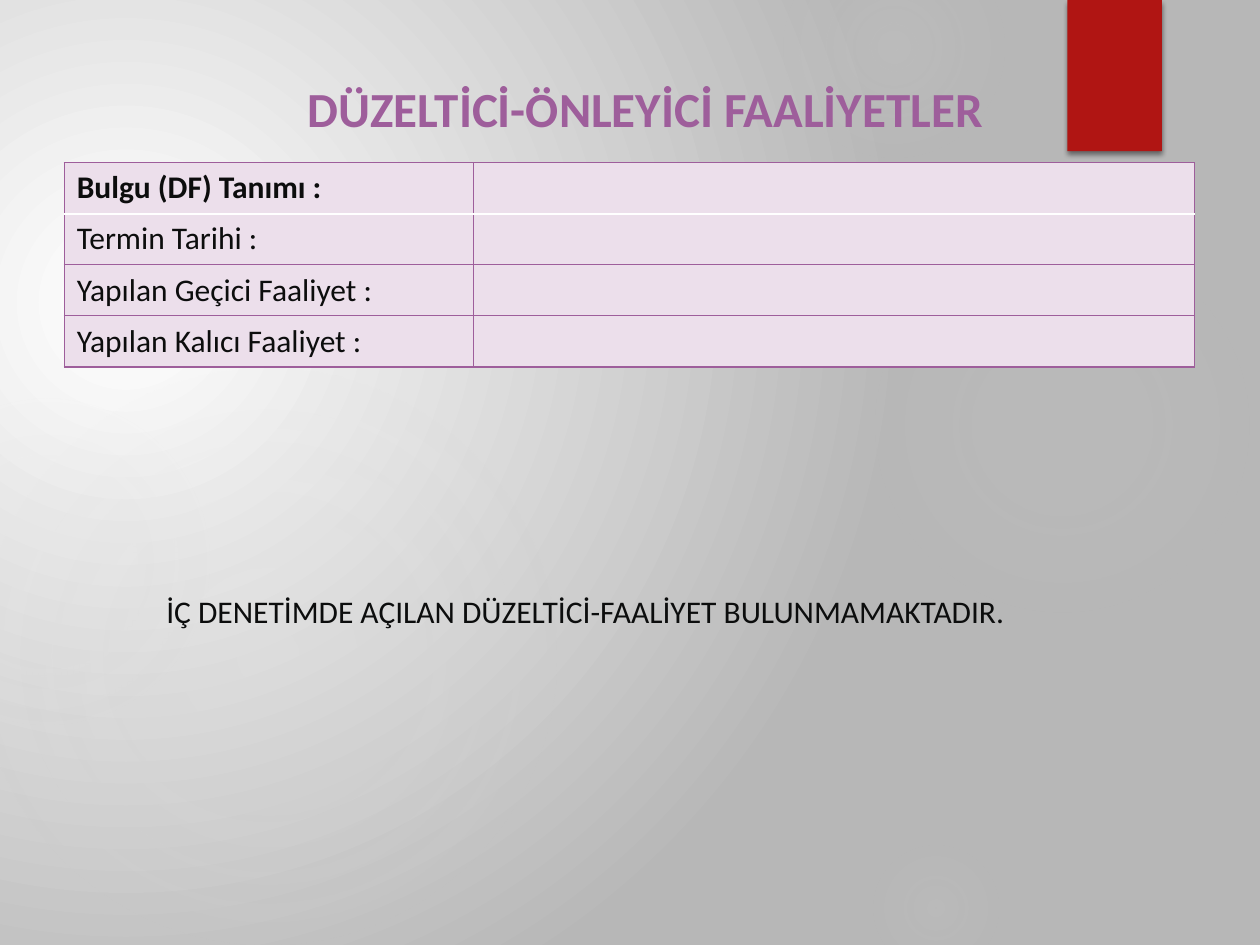
from dataclasses import dataclass
from typing import NamedTuple

from lxml.etree import SubElement
from pptx import Presentation
from pptx.dml.color import RGBColor
from pptx.enum.shapes import MSO_SHAPE
from pptx.enum.text import MSO_ANCHOR, MSO_AUTO_SIZE, PP_ALIGN
from pptx.oxml import parse_xml
from pptx.oxml.ns import nsdecls, qn
from pptx.util import Pt


@dataclass(frozen=True)
class Theme:
    font: str = "Calibri"
    head: float = 28
    body: float = 18
    ink: str = "0C0D0D"
    plum: str = "9E5E9B"
    pale: str = "ECDFEB"
    white: str = "FFFFFF"
    back: str = "B7B7B7"
    glow: str = "D9D9D9"
    red: str = "B01513"


class Stop(NamedTuple):
    pos: int
    color: str
    alpha: int = 100


class Orb(NamedTuple):
    left: float
    top: float
    size: float
    inner: int
    mid: int
    edge: int


class Box(NamedTuple):
    left: float
    top: float
    width: float
    height: float


THEME = Theme()
ORBS = [
    Orb(496, 132, 222, 7, 6, 69),
    Orb(448, -36, 126, 14, 7, 73),
    Orb(496, 480, 78, 9, 5, 66),
    Orb(-12, 210, 330, 11, 10, 75),
    Orb(-66, 228, 186, 8, 8, 72),
]
LABELS = ["Bulgu (DF) Tanımı :", "Termin Tarihi :",
          "Yapılan Geçici Faaliyet :", "Yapılan Kalıcı Faaliyet :"]
COLS = [234, 412]
ROW = 29.2


def radial(solid, stops: list[Stop], focus: tuple) -> None:
    """Swap a solid fill element for a circular gradient."""
    marks = "".join(
        f'<a:gs pos="{s.pos * 1000}"><a:srgbClr val="{s.color}">'
        f'<a:alpha val="{s.alpha * 1000}"/></a:srgbClr></a:gs>' for s in stops)
    l, t, r, b = (v * 1000 for v in focus)
    grad = parse_xml(
        f'<a:gradFill {nsdecls("a")} rotWithShape="1"><a:gsLst>{marks}</a:gsLst>'
        f'<a:path path="circle"><a:fillToRect l="{l}" t="{t}" r="{r}" b="{b}"/>'
        '</a:path></a:gradFill>')
    solid.getparent().replace(solid, grad)


def plain(slide, kind: MSO_SHAPE, box: Box, color: str):
    shape = slide.shapes.add_shape(kind, *map(Pt, box))
    shape.shadow.inherit = False
    shape.fill.solid()
    shape.fill.fore_color.rgb = RGBColor.from_string(color)
    shape.line.fill.background()
    return shape


def draw_orb(slide, orb: Orb) -> None:
    box = Box(orb.left, orb.top, orb.size, orb.size)
    shape = plain(slide, MSO_SHAPE.OVAL, box, THEME.glow)
    stops = [Stop(0, THEME.glow, orb.inner), Stop(36, THEME.glow, orb.mid),
             Stop(orb.edge, THEME.glow, 0), Stop(100, THEME.glow, 0)]
    radial(shape.element.spPr.find(qn("a:solidFill")), stops, (50, 50, 50, 50))


def draw_flag(slide) -> None:
    flag = plain(slide, MSO_SHAPE.RECTANGLE, Box(610, 0, 54, 86.4), THEME.red)
    glow = flag.element.spPr.find(qn("a:effectLst"))
    glow.append(parse_xml(
        f'<a:outerShdw {nsdecls("a")} blurRad="{Pt(3)}" dist="{Pt(2)}" dir="5400000" '
        'rotWithShape="0"><a:srgbClr val="000000"><a:alpha val="45000"/>'
        '</a:srgbClr></a:outerShdw>'))


def style(para, size: float, color: str, bold: bool = False) -> None:
    for run in para.runs:
        font = run.font
        font.name, font.size, font.bold = THEME.font, Pt(size), bold
        font.color.rgb = RGBColor.from_string(color)


def place(slide, shape, box: Box, text: str):
    """Put a placeholder in front, at the box, and return its paragraph."""
    shape.left, shape.top, shape.width, shape.height = map(Pt, box)
    slide.shapes.element.append(shape.element)
    frame = shape.text_frame
    frame.text = text
    frame.word_wrap = True
    return frame.paragraphs[0]


def edge(cell, side: str, color: str, width: float) -> None:
    line = SubElement(cell._tc.get_or_add_tcPr(), qn(f"a:{side}"), w=str(Pt(width)))
    SubElement(SubElement(line, qn("a:solidFill")), qn("a:srgbClr"), val=color)


def draw_table(slide) -> None:
    box = Box(36.72, 92.88, sum(COLS), ROW * len(LABELS))
    table = slide.shapes.add_table(len(LABELS), len(COLS), *map(Pt, box)).table
    table.first_row = table.horz_banding = False
    for col, width in zip(table.columns, COLS):
        col.width = Pt(width)
    for i, label in enumerate(LABELS):
        table.rows[i].height = Pt(ROW)
        table.cell(i, 0).text = label
        style(table.cell(i, 0).text_frame.paragraphs[0], THEME.body, THEME.ink, i == 0)
        for cell in table.rows[i].cells:
            # A white rule parts the first row from the rest
            rule = {"lnB": 0, "lnT": 1}
            for side in ("lnL", "lnR", "lnT", "lnB"):
                if rule.get(side) == i:
                    edge(cell, side, THEME.white, 1.5)
                else:
                    edge(cell, side, THEME.plum, 0.75)
            cell.fill.solid()
            cell.fill.fore_color.rgb = RGBColor.from_string(THEME.pale)


def main() -> None:
    deck = Presentation()
    deck.slide_width, deck.slide_height = Pt(720), Pt(540)
    slide = deck.slides.add_slide(deck.slide_layouts[1])
    title, body = slide.placeholders

    # Background and decoration
    slide.background.fill.solid()
    solid = slide.element.find(f'.//{qn("p:bgPr")}/{qn("a:solidFill")}')
    radial(solid, [Stop(0, THEME.white), Stop(100, THEME.back)], (45, 65, 125, 100))
    for orb in ORBS:
        draw_orb(slide, orb)
    draw_flag(slide)

    # Title
    para = place(slide, title, Box(133.2, 38.16, 470.88, 51.12),
                 "DÜZELTİCİ-ÖNLEYİCİ FAALİYETLER")
    title.text_frame.vertical_anchor = MSO_ANCHOR.MIDDLE
    para.alignment, para.line_spacing, para.space_after = PP_ALIGN.CENTER, 0.9, Pt(6)
    style(para, THEME.head, THEME.plum, True)

    draw_table(slide)

    # Closing statement, without a bullet
    para = place(slide, body, Box(87.84, 334.8, 544.32, 28.8),
                 "İÇ DENETİMDE AÇILAN DÜZELTİCİ-FAALİYET BULUNMAMAKTADIR.")
    body.text_frame.auto_size = MSO_AUTO_SIZE.SHAPE_TO_FIT_TEXT
    para.space_before = Pt(0)
    props = para._p.get_or_add_pPr()
    props.set("marL", "0")
    props.set("indent", "0")
    SubElement(props, qn("a:buNone"))
    style(para, THEME.body, THEME.ink)

    deck.save("out.pptx")


if __name__ == "__main__":
    main()
